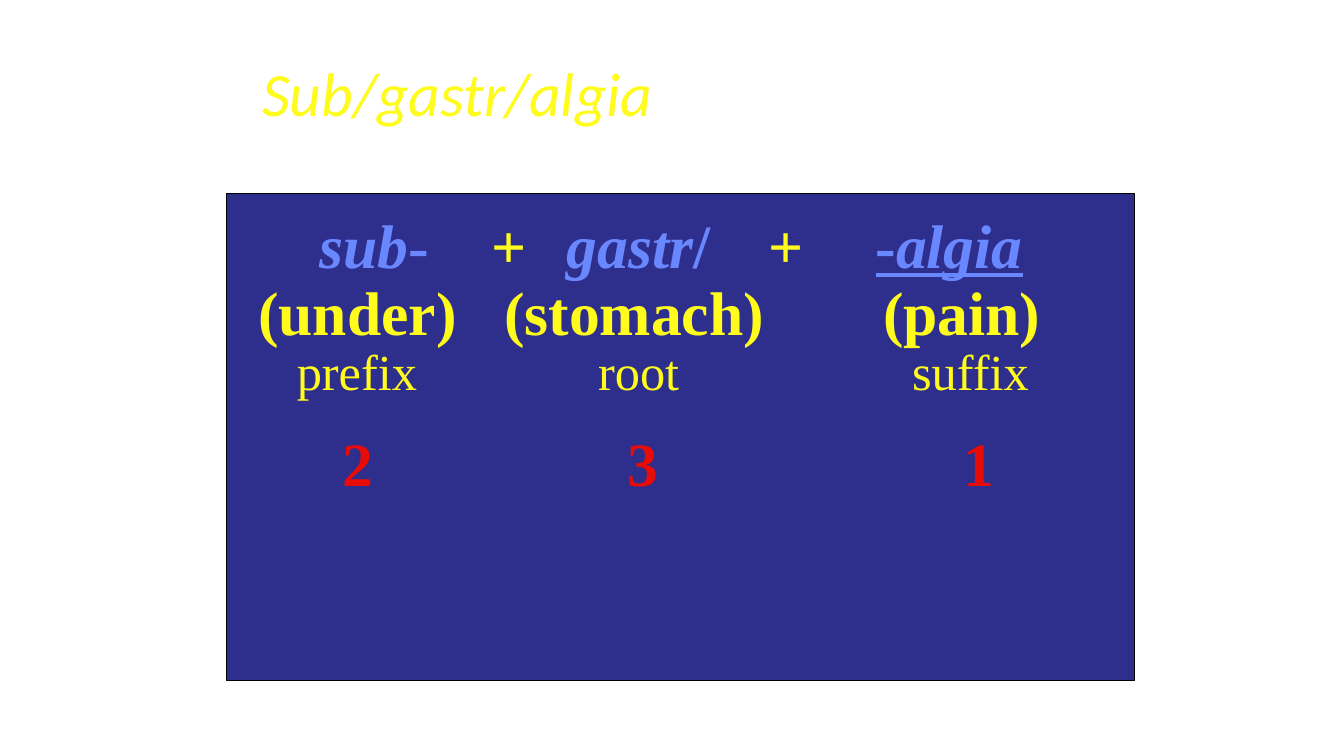
from dataclasses import dataclass

from pptx import Presentation
from pptx.dml.color import RGBColor
from pptx.enum.shapes import MSO_SHAPE
from pptx.enum.text import MSO_ANCHOR, MSO_AUTO_SIZE, PP_ALIGN
from pptx.util import Inches, Pt


@dataclass(frozen=True)
class Theme:
    yellow: str = "FFFB1D"
    blue: str = "6987FF"
    red: str = "E70C07"
    navy: str = "2E2E8C"
    black: str = "000000"
    title_font: str = "Calibri"
    body_font: str = "Times New Roman"
    large: int = 44
    medium: int = 36
    outline: float = 0.75


class WordSlide:
    def __init__(self, deck, theme):
        self.theme = theme
        self.slide = deck.slides.add_slide(deck.slide_layouts[5])

    def add_piece(self, paragraph, text, color, **formats):
        run = paragraph.add_run()
        run.text = text
        settings = {"name": self.theme.body_font, "size": Pt(self.theme.large)} | formats
        for attribute, value in settings.items():
            setattr(run.font, attribute, value)
        run.font.color.rgb = RGBColor.from_string(color)

    def title(self, text, left, top, width, height):
        heading = self.slide.shapes.title
        place = {"left": left, "top": top, "width": width, "height": height}
        for attribute, value in place.items():
            setattr(heading, attribute, Inches(value))
        frame = heading.text_frame
        frame.auto_size = MSO_AUTO_SIZE.NONE
        frame.vertical_anchor = MSO_ANCHOR.MIDDLE
        paragraph = frame.paragraphs[0]
        paragraph.alignment = PP_ALIGN.LEFT
        paragraph.line_spacing = 0.9
        self.add_piece(paragraph, text, self.theme.yellow, name=self.theme.title_font, italic=True)

    def panel(self, left, top, width, height):
        board = self.slide.shapes.add_shape(
            MSO_SHAPE.RECTANGLE, *map(Inches, (left, top, width, height))
        )
        board.shadow.inherit = False
        board.fill.solid()
        board.fill.fore_color.rgb = RGBColor.from_string(self.theme.navy)
        board.line.color.rgb = RGBColor.from_string(self.theme.black)
        board.line.width = Pt(self.theme.outline)

    def label(self, pieces, color, left, top, width, height=0.83, **formats):
        box = self.slide.shapes.add_textbox(*map(Inches, (left, top, width, height)))
        frame = box.text_frame
        frame.word_wrap = True
        frame.auto_size = MSO_AUTO_SIZE.SHAPE_TO_FIT_TEXT
        paragraph = frame.paragraphs[0]
        paragraph.alignment = PP_ALIGN.CENTER
        for text, italic in pieces:
            self.add_piece(paragraph, text, color, italic=italic, **formats)


def main():
    theme = Theme()
    deck = Presentation()
    deck.slide_width, deck.slide_height = Inches(13.33), Inches(7.5)
    word = WordSlide(deck, theme)
    word.panel(2.25, 1.92, 9, 4.83)
    word.title("Sub/gastr/algia", 2.5, 0.33, 8.5, 1.25)

    kinds = [("prefix", 2.5, 2.08), ("root", 5.25, 2.17), ("suffix", 8.75, 1.75)]
    for kind, left, width in kinds:
        word.label([(kind, False)], theme.yellow, left, 3.33, width, 0.7,
                   size=Pt(theme.medium))

    parts = [
        ([("sub", True), ("-", False)], 2.67, 2.08, False),
        ([("gastr", True), ("/", False)], 5.25, 2.17, False),
        ([("-", False), ("algia", True)], 8.5, 1.83, True),
    ]
    for pieces, left, width, underline in parts:
        word.label(pieces, theme.blue, left, 2, width, bold=True, underline=underline)

    meanings = [("(under)", 2.42, 2.25), ("(stomach)", 4.83, 2.92), ("(pain)", 8.5, 2.08)]
    for meaning, left, width in meanings:
        word.label([(meaning, False)], theme.yellow, left, 2.67, width, bold=True)

    for order, left in [("2", 2.92), ("3", 5.75), ("1", 9.08)]:
        word.label([(order, False)], theme.red, left, 4.17, 1.25, bold=True)

    for left in (4.42, 7.17):
        word.label([("+", False)], theme.yellow, left, 2, 1.25, bold=True)

    deck.save("out.pptx")


if __name__ == "__main__":
    main()
